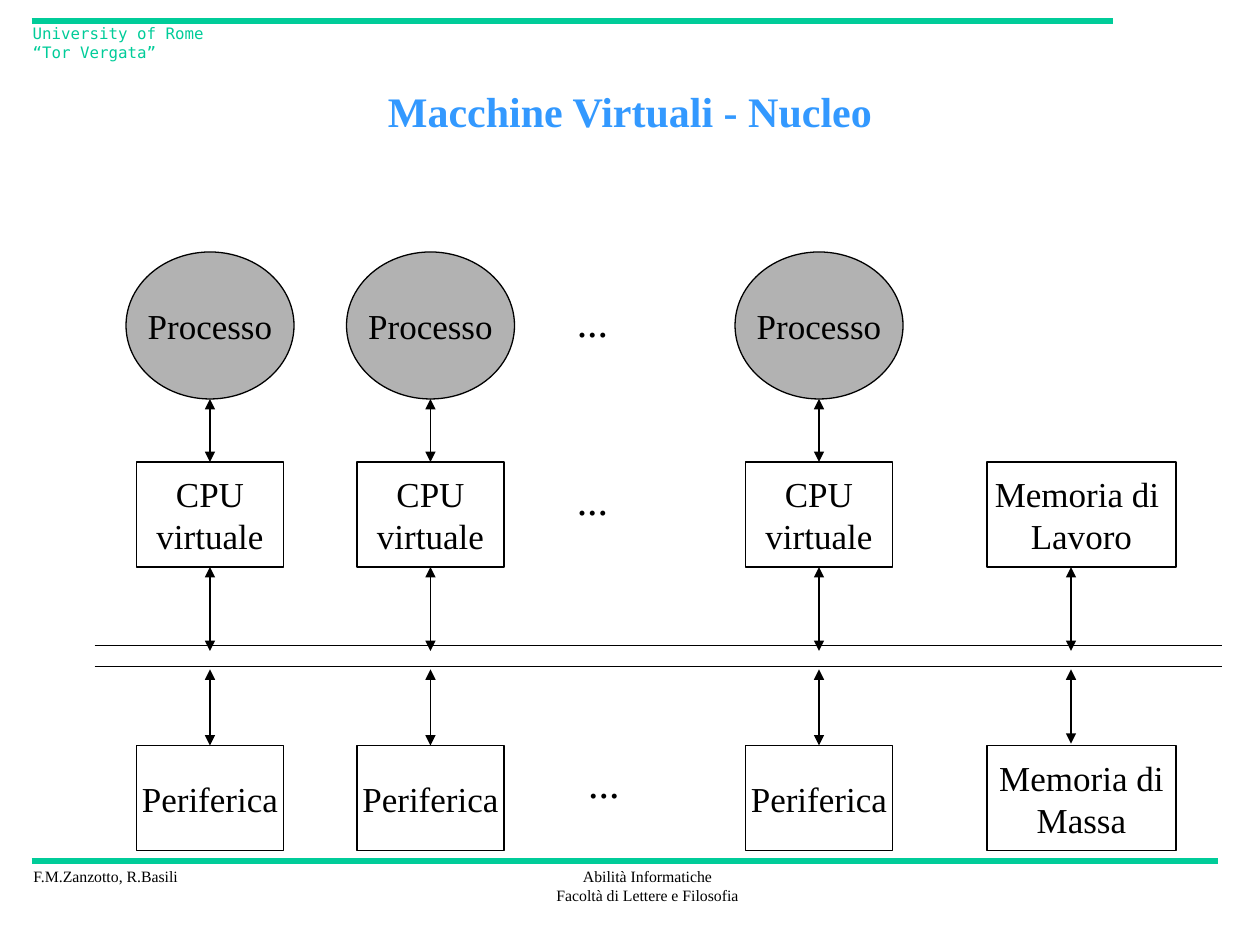
from pptx import Presentation
from pptx.dml.color import RGBColor
from pptx.enum.shapes import MSO_CONNECTOR, MSO_SHAPE
from pptx.enum.text import MSO_ANCHOR, PP_ALIGN
from pptx.oxml.ns import qn
from pptx.util import Pt
from lxml import etree

STRAIGHT = MSO_CONNECTOR.STRAIGHT
RECTANGLE, OVAL = MSO_SHAPE.RECTANGLE, MSO_SHAPE.OVAL
LEFT, CENTER = PP_ALIGN.LEFT, PP_ALIGN.CENTER
TOP, MIDDLE = MSO_ANCHOR.TOP, MSO_ANCHOR.MIDDLE
TOP_SITE, BOTTOM_SITE = 0, 2

COLORS = {"black": "000000", "green": "00CC99", "blue": "3399FF", "gray": "B2B2B2"}
SERIF, MONO = "Times New Roman", "DejaVu Sans Mono"
TITLE = {"name": SERIF, "size": Pt(24), "bold": True}
LABEL = {"name": SERIF, "size": Pt(20)}
DOTS = {"name": SERIF, "size": Pt(24)}
SMALL = {"name": SERIF, "size": Pt(9)}
HEADER = {"name": MONO, "size": Pt(9)}

COLUMN_CENTERS = [120, 246, 468]
MEMORY_LEFT, MEMORY_WIDTH, MEMORY_ARROW = 564, 108, 612
BOX_WIDTH, BOX_HEIGHT = 84, 60
OVAL_WIDTH, OVAL_HEIGHT = 96, 84
PROCESS_TOP, CPU_TOP, DEVICE_TOP = 144, 264, 426
UPPER_ARROW_END, LOWER_ARROW_START, LOWER_ARROW_END = 372, 382.5, 425
BUS_LEFT, BUS_RIGHT, BUS_LINES = 54, 698.5, [369, 381]


def color(name):
    return RGBColor.from_string(COLORS[name])


def write(shape, lines, font, ink="black", align=CENTER, anchor=MIDDLE, wrap=False):
    frame = shape.text_frame
    frame.word_wrap = wrap
    frame.vertical_anchor = anchor
    frame.text = "\n".join(lines)
    for paragraph in frame.paragraphs:
        paragraph.alignment = align
        for run in paragraph.runs:
            for attribute, value in font.items():
                setattr(run.font, attribute, value)
            run.font.color.rgb = color(ink)


def add_text(slide, left, top, width, height, lines, font, **options):
    box = slide.shapes.add_textbox(Pt(left), Pt(top), Pt(width), Pt(height))
    write(box, lines, font, anchor=TOP, **options)


def add_node(slide, kind, left, top, width, height, lines, fill=None):
    shape = slide.shapes.add_shape(kind, Pt(left), Pt(top), Pt(width), Pt(height))
    shape.shadow.inherit = False
    if fill:
        shape.fill.solid()
        shape.fill.fore_color.rgb = color(fill)
    else:
        shape.fill.background()
    shape.line.color.rgb = color("black")
    shape.line.width = Pt(0.75)
    write(shape, lines, LABEL)
    return shape


def add_line(slide, start, end, ink="black", width=0.75):
    points = [Pt(value) for value in (*start, *end)]
    line = slide.shapes.add_connector(STRAIGHT, *points)
    line.line.color.rgb = color(ink)
    line.line.width = Pt(width)
    etree.SubElement(line._element.spPr, qn("a:effectLst"))
    return line


def add_arrow(slide, center, top, bottom):
    arrow = add_line(slide, (center, top), (center, bottom))
    outline = arrow.line._get_or_add_ln()
    for tag in ("a:headEnd", "a:tailEnd"):
        etree.SubElement(outline, qn(tag), type="triangle")
    return arrow


def add_title(slide, text):
    title = slide.shapes.title
    title.left, title.top, title.width, title.height = Pt(54), Pt(36), Pt(612), Pt(54)
    write(title, [text], TITLE, ink="blue", wrap=True)


def add_frame(slide):
    add_line(slide, (18, 492), (696, 492), "green", 3)
    add_line(slide, (18, 12), (636, 12), "green", 3)
    add_text(slide, 12, 492, 98, 18, ["F.M.Zanzotto, R.Basili"], SMALL, align=LEFT)
    add_text(slide, 310.5, 492, 119, 29,
             ["Abilità Informatiche", "Facoltà di Lettere e Filosofia"], SMALL)
    add_text(slide, 11.5, 10, 123, 29, ["University of Rome “Tor Vergata”"], HEADER,
             ink="green", align=LEFT, wrap=True)


def add_column(slide, center):
    box_left = center - BOX_WIDTH / 2
    add_node(slide, OVAL, center - OVAL_WIDTH / 2, PROCESS_TOP, OVAL_WIDTH, OVAL_HEIGHT,
             ["Processo"], "gray")
    cpu = add_node(slide, RECTANGLE, box_left, CPU_TOP, BOX_WIDTH, BOX_HEIGHT,
                   ["CPU", "virtuale"])
    device = add_node(slide, RECTANGLE, box_left, DEVICE_TOP, BOX_WIDTH, BOX_HEIGHT,
                      ["Periferica"])
    process_arrow = add_arrow(slide, center, PROCESS_TOP + OVAL_HEIGHT, CPU_TOP)
    process_arrow.end_connect(cpu, TOP_SITE)
    cpu_arrow = add_arrow(slide, center, CPU_TOP + BOX_HEIGHT, UPPER_ARROW_END)
    cpu_arrow.begin_connect(cpu, BOTTOM_SITE)
    device_arrow = add_arrow(slide, center, LOWER_ARROW_START, DEVICE_TOP)
    device_arrow.end_connect(device, TOP_SITE)


def add_memories(slide):
    for top, lines in [(CPU_TOP, ["Memoria di ", "Lavoro"]),
                       (DEVICE_TOP, ["Memoria di", "Massa"])]:
        add_node(slide, RECTANGLE, MEMORY_LEFT, top, MEMORY_WIDTH, BOX_HEIGHT, lines)
    add_arrow(slide, MEMORY_ARROW, CPU_TOP + BOX_HEIGHT, UPPER_ARROW_END)
    add_arrow(slide, MEMORY_ARROW, LOWER_ARROW_START, LOWER_ARROW_END)


def main():
    presentation = Presentation()
    presentation.slide_width, presentation.slide_height = Pt(720), Pt(540)
    slide = presentation.slides.add_slide(presentation.slide_layouts[5])
    add_frame(slide)
    add_title(slide, "Macchine Virtuali - Nucleo")
    for center in COLUMN_CENTERS:
        add_column(slide, center)
    add_memories(slide)
    for height in BUS_LINES:
        add_line(slide, (BUS_LEFT, height), (BUS_RIGHT, height))
    for left, top in [(322.5, 165.5), (322.5, 267), (329, 429)]:
        add_text(slide, left, top, 32.5, 36, ["..."], DOTS, align=LEFT)
    presentation.save("out.pptx")


if __name__ == "__main__":
    main()
